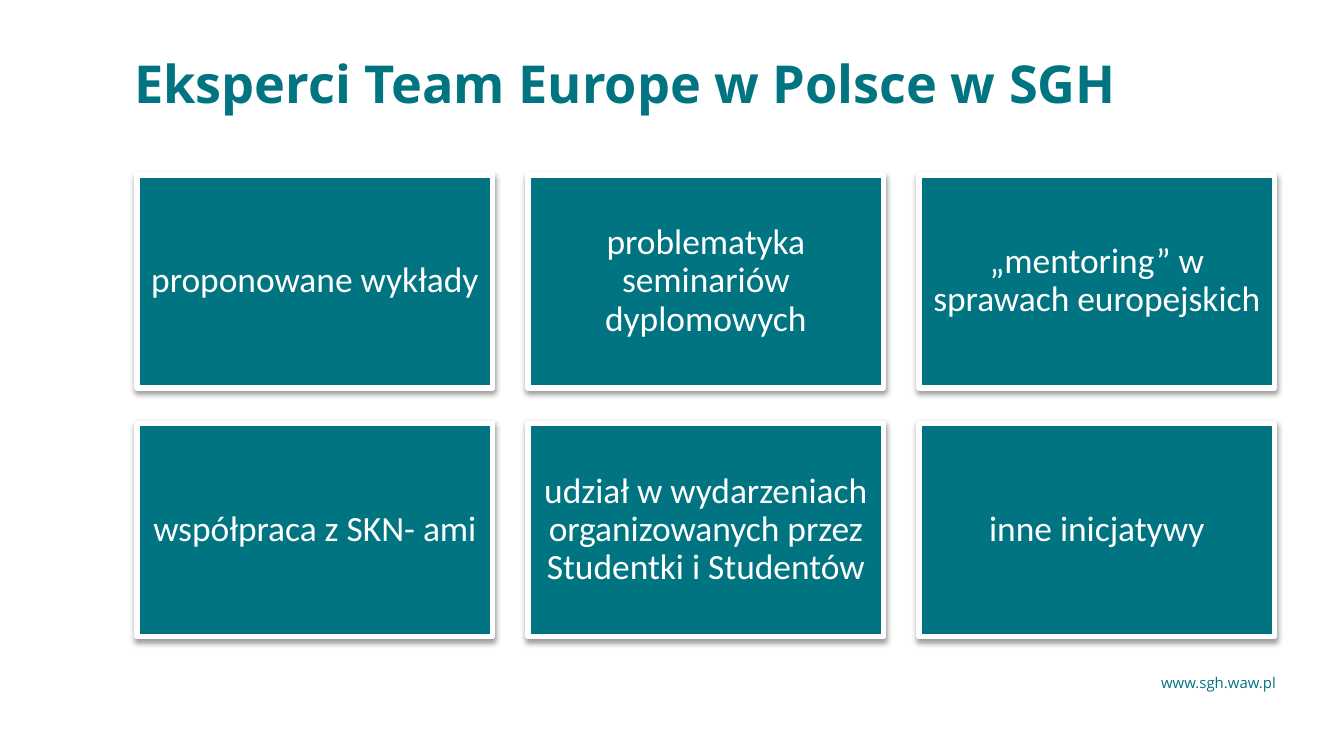
"""Build the slide on Team Europe experts: a title, six topic cards and a web address."""
import pptx
import pptx.dml.color
import pptx.enum.text
import pptx.enum.shapes
import pptx.oxml
import pptx.oxml.ns
import pptx.util

Pt = pptx.util.Pt
TEAL = pptx.dml.color.RGBColor(0x00, 0x74, 0x81)
WHITE = pptx.dml.color.RGBColor(0xFF, 0xFF, 0xFF)
ALIGN = pptx.enum.text.PP_ALIGN
ANCHOR = pptx.enum.text.MSO_ANCHOR
SHADOW = (
    f'<a:outerShdw {pptx.oxml.ns.nsdecls("a")} blurRad="{Pt(3.1)}" dist="{Pt(1.6)}" '
    'dir="5400000" rotWithShape="0">'
    '<a:srgbClr val="000000"><a:alpha val="38000"/></a:srgbClr></a:outerShdw>'
)


def write(s, text, color, margin, frame, para, font):
    tf = s.text_frame
    for side in ("left", "top", "right", "bottom"):
        setattr(tf, f"margin_{side}", Pt(margin))
    p = tf.paragraphs[0]
    r = p.add_run()
    r.text = text
    r.font.color.rgb = color
    for target, values in ((tf, frame), (p, para), (r.font, font)):
        for name, value in values.items():
            setattr(target, name, value)


prs = pptx.Presentation()
prs.slide_width, prs.slide_height = Pt(720), Pt(405)
slide = prs.slides.add_slide(prs.slide_layouts[6])

s = slide.shapes.add_textbox(Pt(622), Pt(361), Pt(62.6), Pt(9.4))
write(s, "www.sgh.waw.pl", TEAL, 0, {"word_wrap": False}, {},
      {"name": "Open Sans", "size": Pt(8)})

s = slide.shapes.add_textbox(Pt(72), Pt(30.2), Pt(612), Pt(53.3))
write(s, "Eksperci Team Europe w Polsce w SGH", TEAL, 0,
      {"word_wrap": True}, {"line_spacing": 0.95},
      {"name": "Open Sans", "size": Pt(28), "bold": True})

topics = [
    "proponowane wykłady",
    "problematyka seminariów dyplomowych",
    "„mentoring” w sprawach europejskich",
    "współpraca z SKN- ami",
    "udział w wydarzeniach organizowanych przez Studentki i Studentów",
    "inne inicjatywy",
]
left, top, width, height, gap = 73.5, 93.6, 190.4, 114.2, 19.04
for i, topic in enumerate(topics):
    row, col = divmod(i, 3)
    s = slide.shapes.add_shape(
        pptx.enum.shapes.MSO_SHAPE.RECTANGLE,
        Pt(left + col * (width + gap)), Pt(top + row * (height + gap)),
        Pt(width), Pt(height))
    s.fill.solid()
    s.fill.fore_color.rgb = TEAL
    s.line.color.rgb = WHITE
    s.line.width = Pt(3)
    s.shadow.inherit = False
    effects = s._element.spPr.find(pptx.oxml.ns.qn("a:effectLst"))
    effects.append(pptx.oxml.parse_xml(SHADOW))
    write(s, topic, WHITE, 5.7,
          {"word_wrap": True, "vertical_anchor": ANCHOR.MIDDLE},
          {"alignment": ALIGN.CENTER, "line_spacing": 0.9},
          {"name": "Calibri", "size": Pt(19)})

prs.save("out.pptx")
